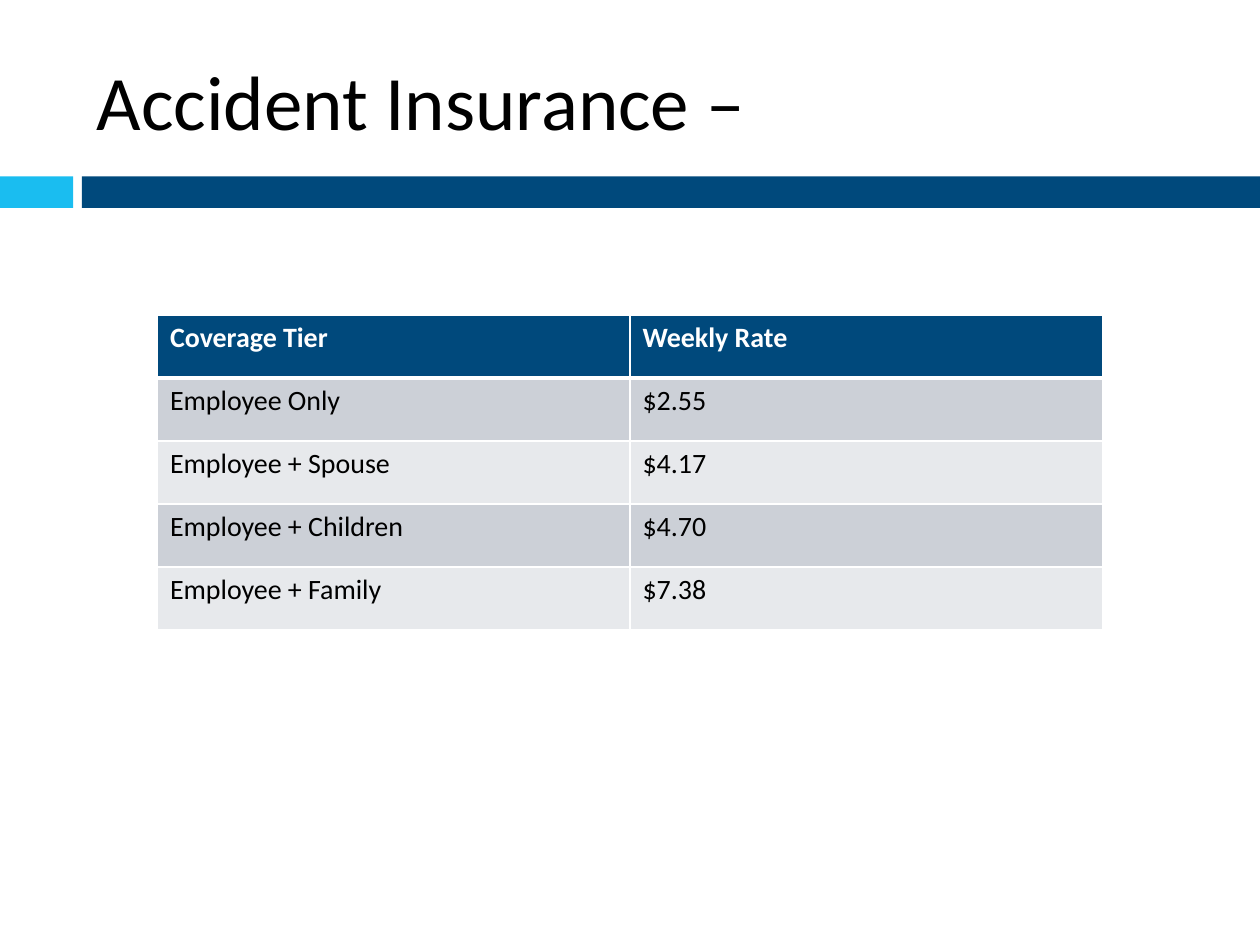
from lxml import etree
from pptx import Presentation
from pptx.dml.color import RGBColor
from pptx.enum import shapes, text
from pptx.oxml import ns
from pptx.util import Inches, Pt

FONT = "Calibri"
NAVY, SKY, WHITE, BLACK = "00497C", "1ABDF0", "FFFFFF", "000000"
BANDS = ("CCD0D7", "E7E9EC")
RATES = [
    ("Coverage Tier", "Weekly Rate"),
    ("Employee Only", "$2.55"),
    ("Employee + Spouse", "$4.17"),
    ("Employee + Children", "$4.70"),
    ("Employee + Family", "$7.38"),
]


def paint(fill, color):
    fill.solid()
    fill.fore_color.rgb = RGBColor.from_string(color)


def write(frame, words, size, color, bold=False):
    para = frame.paragraphs[0]
    para.text = words
    para.font.name, para.font.size, para.font.bold = FONT, Pt(size), bold
    para.font.color.rgb = RGBColor.from_string(color)


def add_bar(page, left, width, color):
    bar = page.shapes.add_shape(shapes.MSO_SHAPE.RECTANGLE, Inches(left),
                                Inches(1.4), Inches(width), Inches(0.25))
    bar.shadow.inherit = False
    bar.line.fill.background()
    paint(bar.fill, color)


def add_title(page, words):
    box = page.shapes.add_textbox(Inches(0.67), Inches(0.25),
                                  Inches(8.92), Inches(1.08))
    frame = box.text_frame
    frame.word_wrap = True
    frame.vertical_anchor = text.MSO_ANCHOR.MIDDLE
    write(frame, words, 44, BLACK)


def add_border(cell, side, width):
    line = etree.SubElement(cell._tc.get_or_add_tcPr(), ns.qn(f"a:ln{side}"),
                            w=str(Pt(width)))
    fill = etree.SubElement(line, ns.qn("a:solidFill"))
    etree.SubElement(fill, ns.qn("a:srgbClr"), val=WHITE)


def add_rate_table(page, rows):
    table = page.shapes.add_table(len(rows), len(rows[0]), Inches(1.25),
                                  Inches(2.5), Inches(7.5), Inches(2.5)).table
    for r, row in enumerate(rows):
        header = r == 0
        # A thicker rule separates the header from the rates
        widths = {"L": 1, "R": 1, "T": 3 if r == 1 else 1, "B": 3 if header else 1}
        for c, words in enumerate(row):
            cell = table.cell(r, c)
            for side, width in widths.items():
                add_border(cell, side, width)
            paint(cell.fill, NAVY if header else BANDS[(r - 1) % 2])
            write(cell.text_frame, words, 16, WHITE if header else BLACK, header)


def main():
    deck = Presentation()
    deck.slide_width, deck.slide_height = Inches(10), Inches(7.5)
    page = deck.slides.add_slide(deck.slide_layouts[6])

    # Divider under the title
    add_bar(page, 0, 0.58, SKY)
    add_bar(page, 0.65, 9.35, NAVY)

    # Content
    add_rate_table(page, RATES)
    add_title(page, "Accident Insurance –")

    deck.save("out.pptx")


if __name__ == "__main__":
    main()
